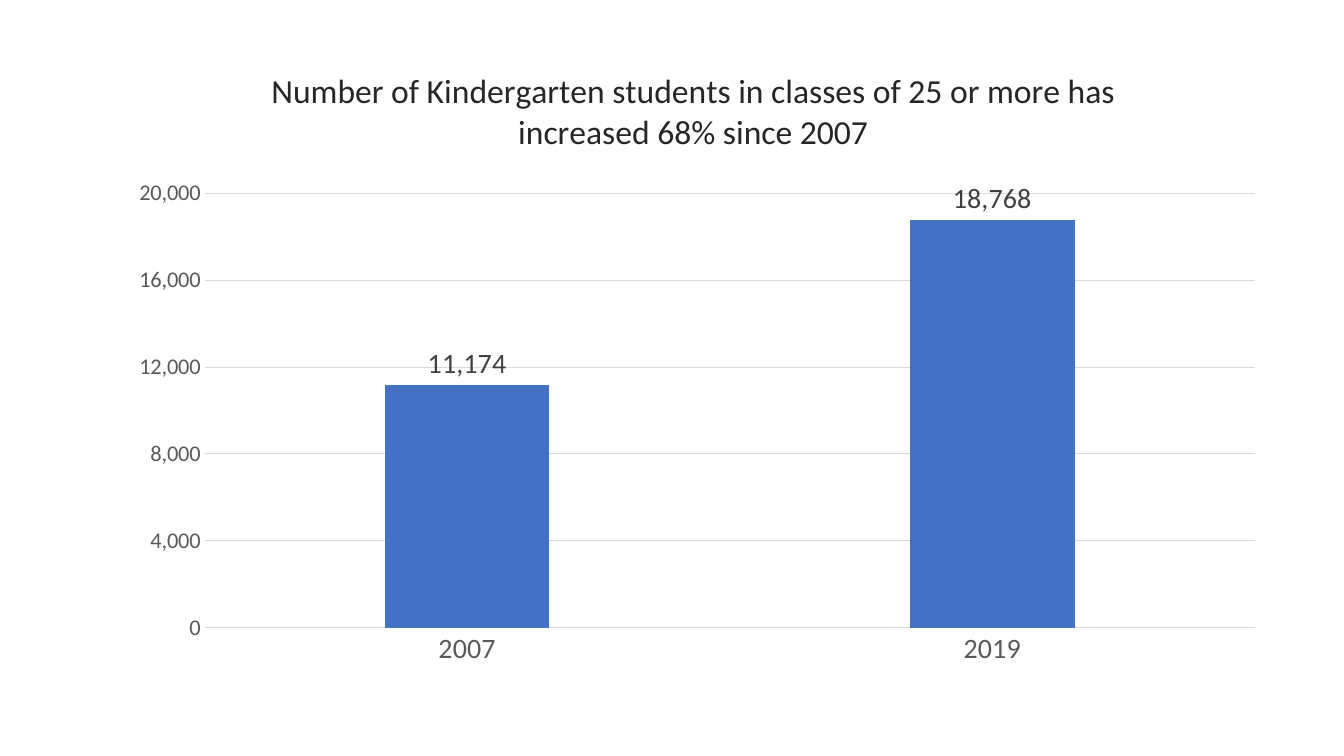
"""Build a slide with a column chart of kindergarten students in large classes."""
from lxml.etree import SubElement
from pptx import Presentation
from pptx.chart.data import CategoryChartData
from pptx.dml.color import RGBColor
from pptx.enum.chart import XL_CHART_TYPE, XL_LABEL_POSITION, XL_TICK_MARK
from pptx.enum.text import PP_ALIGN
from pptx.oxml.ns import qn
from pptx.util import Pt

FONT = "Calibri"
COLORS = {
    "bar": "4472C4",
    "title": "262626",
    "label": "404040",
    "axis": "595959",
    "grid": "D9D9D9",
}


def write_text(frame, text, *, size, color, align=PP_ALIGN.CENTER):
    para = frame.paragraphs[0]
    para.alignment = align
    span = para.add_run()
    span.text = text
    span.font.name = FONT
    span.font.size = Pt(size)
    span.font.bold = False
    span.font.color.rgb = RGBColor.from_string(COLORS[color])


def place_part(part, index, settings):
    for old_layout in part.findall(qn("c:layout")):
        part.remove(old_layout)
    layout = SubElement(part, qn("c:layout"))
    part.insert(index, layout)
    manual = SubElement(layout, qn("c:manualLayout"))
    for name, value in settings.items():
        SubElement(manual, qn(f"c:{name}")).set("val", str(value))


deck = Presentation()
deck.slide_width, deck.slide_height = Pt(960), Pt(540)
page = deck.slides.add_slide(deck.slide_layouts[6])

data = CategoryChartData(number_format="#,##0")
data.categories = ["2007", "2019"]
data.add_series("Series 1", [11174, 18768])
chart = page.shapes.add_chart(
    XL_CHART_TYPE.COLUMN_CLUSTERED, Pt(72.7), Pt(25.9), Pt(834.5), Pt(465.8), data
).chart
chart.has_legend = False
chart.font.name = FONT
chart.font.size = Pt(10)

chart.has_title = True
title = chart.chart_title
write_text(
    title.text_frame,
    "Number of Kindergarten students in classes of 25 or more has increased 68% since 2007",
    size=24,
    color="title",
)
title.include_in_layout = False
edges = {"xMode": "edge", "yMode": "edge"}
place_part(title._element, 1, {**edges, "x": 0.14, "y": 0.04})
place_part(
    chart._chartSpace.chart.plotArea,
    0,
    {"layoutTarget": "inner", **edges, "x": 0.088, "y": 0.241, "w": 0.899, "h": 0.666},
)

plot = chart.plots[0]
plot.gap_width = 219
plot.overlap = -27
plot.vary_by_categories = False
bars = plot.series[0]
bars.format.fill.solid()
bars.format.fill.fore_color.rgb = RGBColor.from_string(COLORS["bar"])
labels = bars.data_labels
labels.show_value = True
labels.position = XL_LABEL_POSITION.OUTSIDE_END
labels.number_format = "#,##0"
labels.number_format_is_linked = False

years, counts = chart.category_axis, chart.value_axis
for axis in (years, counts):
    axis.major_tick_mark = XL_TICK_MARK.NONE
    axis.minor_tick_mark = XL_TICK_MARK.NONE
counts.minimum_scale = 0
counts.maximum_scale = 20000
counts.major_unit = 4000
counts.tick_labels.number_format = "#,##0"
counts.tick_labels.number_format_is_linked = False
counts.format.line.fill.background()
counts.has_major_gridlines = True

for line in (years.format.line, counts.major_gridlines.format.line):
    line.width = Pt(0.75)
    line.color.rgb = RGBColor.from_string(COLORS["grid"])

for font, size, color in (
    (years.tick_labels.font, 20, "axis"),
    (counts.tick_labels.font, 16, "axis"),
    (labels.font, 20, "label"),
):
    font.name = FONT
    font.size = Pt(size)
    font.color.rgb = RGBColor.from_string(COLORS[color])

deck.save("out.pptx")
